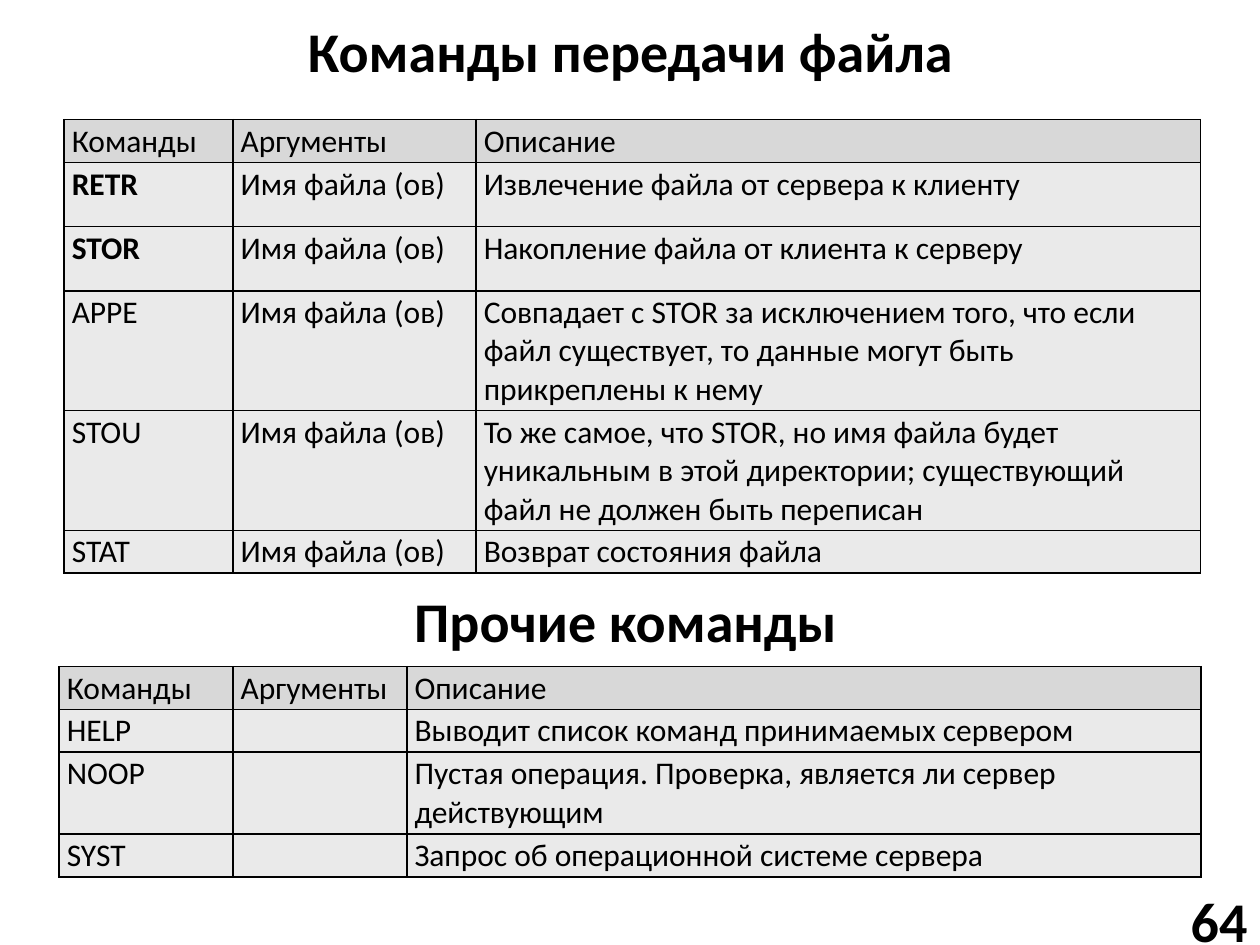
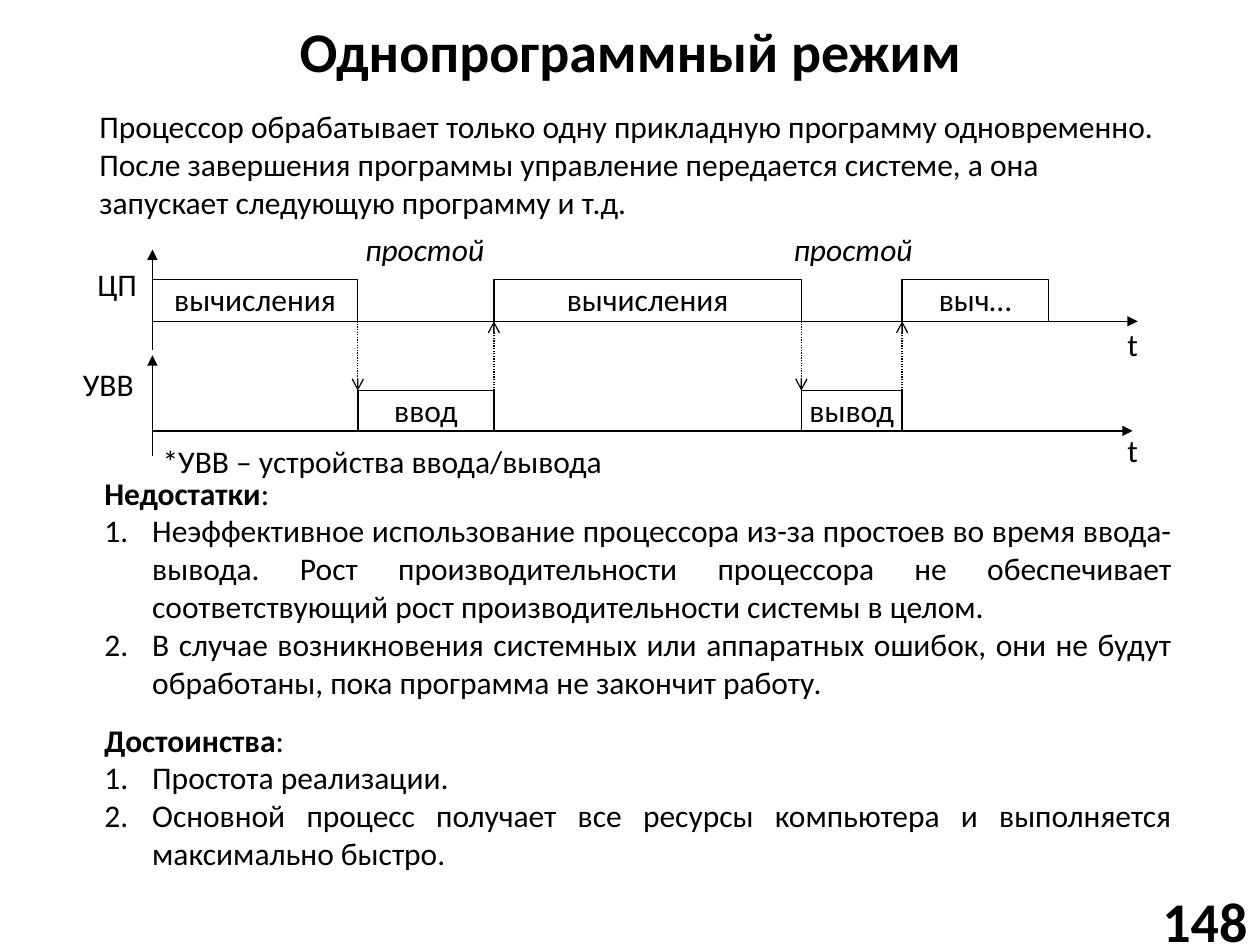
from lxml.etree import SubElement
from pptx import Presentation
from pptx.dml.color import RGBColor
from pptx.enum.dml import MSO_LINE
from pptx.enum.shapes import MSO_CONNECTOR, MSO_SHAPE
from pptx.enum.text import MSO_ANCHOR, PP_ALIGN
from pptx.oxml.ns import qn
from pptx.util import Inches, Pt

BLACK = RGBColor(0x00, 0x00, 0x00)
WHITE = RGBColor(0xFF, 0xFF, 0xFF)
HEADER_GREY = RGBColor(0xD8, 0xD8, 0xD8)
ROW_GREY = RGBColor(0xEA, 0xEA, 0xEA)
FONT = "Calibri"
BODY_SIZE, TITLE_SIZE = 18, 32
WIDTH, HEIGHT = 10, 7.5
TITLE_AREA = (0.28, 0.05, 9.45, 0.69)
SUBTITLE_AREA = (0.24, 4.58, 9.45, 0.69)
NUMBER_AREA = (8.86, 7.1, 1.14, 0.4)

HEADER = ("Команды", "Аргументы", "Описание")
FILE_NAMES = "Имя файла (ов)"
TRANSFER_COMMANDS = [
    HEADER,
    ("RETR", FILE_NAMES, "Извлечение файла от сервера к клиенту"),
    ("STOR", FILE_NAMES, "Накопление файла от клиента к серверу"),
    ("APPE", FILE_NAMES, "Совпадает с STOR за исключением того, что если файл "
     "существует, то данные могут быть прикреплены к нему"),
    ("STOU", FILE_NAMES, "То же самое, что STOR, но имя файла будет уникальным в этой "
     "директории; существующий файл не должен быть переписан"),
    ("STAT", FILE_NAMES, "Возврат состояния файла"),
]
OTHER_COMMANDS = [
    HEADER,
    ("HELP", "", "Выводит список команд принимаемых сервером"),
    ("NOOP", "", "Пустая операция. Проверка, является ли сервер действующим"),
    ("SYST", "", "Запрос об операционной системе сервера"),
]
BOLD_COMMANDS = ("RETR", "STOR")

INTRO = ("Процессор обрабатывает только одну прикладную программу одновременно. "
         "После завершения программы управление передается системе, а она "
         "запускает следующую программу и т.д.")
LISTS = [
    ("Недостатки", 3.71, 1.92, [
        "Неэффективное использование процессора из-за простоев во время ввода-вывода. "
        "Рост производительности процессора не обеспечивает соответствующий рост "
        "производительности системы в целом.",
        "В случае возникновения системных или аппаратных ошибок, они не будут "
        "обработаны, пока программа не закончит работу.",
    ]),
    ("Достоинства", 5.67, 1.31, [
        "Простота реализации.",
        "Основной процесс получает все ресурсы компьютера и выполняется максимально быстро.",
    ]),
]

INSTANTS = [1.21, 2.84, 3.92, 6.36, 7.16, 8.32]
CPU_TOP, CPU_AXIS = 2.22, 2.55
IO_TOP, IO_AXIS = 3.1, 3.42
BURSTS = [
    ("вычисления", 0, CPU_TOP, CPU_AXIS),
    ("ввод", 1, IO_TOP, IO_AXIS),
    ("вычисления", 2, CPU_TOP, CPU_AXIS),
    ("вывод", 3, IO_TOP, IO_AXIS),
    ("выч…", 4, CPU_TOP, CPU_AXIS),
]
AXIS_LABELS = [
    ("ЦП", (0.73, 2.1, 0.4, 0.25)),
    ("УВВ", (0.61, 2.9, 0.5, 0.25)),
    ("t", (8.79, 2.58, 0.4, 0.25)),
    ("t", (8.79, IO_AXIS, 0.4, 0.25)),
]
FOOTNOTE = ("*УВВ – устройства ввода/вывода", (1.29, 3.51, 4.95, 0.24))


def inches(lengths):
    return [Inches(length) for length in lengths]


def style(para, size=BODY_SIZE, bold=False, italic=False, align=PP_ALIGN.LEFT):
    para.alignment = align
    for span in para.runs:
        font = span.font
        font.name, font.size = FONT, Pt(size)
        font.bold, font.italic = bold, italic
        font.color.rgb = BLACK


def add_text(page, text, area, anchor=MSO_ANCHOR.TOP, wrap=True, **look):
    frame = page.shapes.add_textbox(*inches(area)).text_frame
    frame.word_wrap = wrap
    frame.vertical_anchor = anchor
    frame.text = text
    style(frame.paragraphs[0], **look)
    return frame


def add_heading(page, text, area, align=PP_ALIGN.CENTER):
    add_text(page, text, area, MSO_ANCHOR.MIDDLE, size=TITLE_SIZE, bold=True, align=align)


def add_page(deck, title, number):
    page = deck.slides.add_slide(deck.slide_layouts[6])
    add_heading(page, title, TITLE_AREA)
    add_heading(page, str(number), NUMBER_AREA, PP_ALIGN.RIGHT)
    return page


def add_borders(cell):
    properties = cell._tc.get_or_add_tcPr()
    for index, side in enumerate(("lnL", "lnR", "lnT", "lnB")):
        border = properties.makeelement(qn(f"a:{side}"), {"w": str(Pt(1))})
        fill = SubElement(border, qn("a:solidFill"))
        SubElement(fill, qn("a:srgbClr"), val=str(BLACK))
        properties.insert(index, border)


def add_commands(page, commands, left, top, widths, heights):
    area = inches((left, top, sum(widths), sum(heights)))
    table = page.shapes.add_table(len(commands), len(widths), *area).table
    for column, width in zip(table.columns, widths):
        column.width = Inches(width)
    for row, height, texts in zip(table.rows, heights, commands):
        row.height = Inches(height)
        is_header = texts is HEADER
        for cell, text in zip(row.cells, texts):
            cell.text = text
            cell.margin_left = cell.margin_right = Inches(0.06)
            cell.margin_top = cell.margin_bottom = Inches(0.02)
            cell.vertical_anchor = MSO_ANCHOR.MIDDLE if is_header else MSO_ANCHOR.TOP
            cell.fill.solid()
            cell.fill.fore_color.rgb = HEADER_GREY if is_header else ROW_GREY
            style(cell.text_frame.paragraphs[0], bold=text in BOLD_COMMANDS)
            add_borders(cell)


def add_box(page, text, area, outlined=False, align=PP_ALIGN.CENTER):
    box = page.shapes.add_shape(MSO_SHAPE.RECTANGLE, *inches(area))
    box.shadow.inherit = False
    box.fill.solid()
    box.fill.fore_color.rgb = WHITE
    if outlined:
        box.line.color.rgb = BLACK
        box.line.width = Pt(0.75)
    else:
        box.line.fill.background()
    frame = box.text_frame
    frame.margin_left = frame.margin_right = frame.margin_top = frame.margin_bottom = 0
    frame.vertical_anchor = MSO_ANCHOR.TOP
    frame.text = text
    style(frame.paragraphs[0], align=align)


def add_arrow(page, start, end, head="triangle", dotted=False):
    arrow = page.shapes.add_connector(MSO_CONNECTOR.STRAIGHT, *inches(start + end))
    arrow.line.color.rgb = BLACK
    arrow.line.width = Pt(0.75)
    if dotted:
        arrow.line.dash_style = MSO_LINE.ROUND_DOT
    SubElement(arrow.line._get_or_add_ln(), qn("a:tailEnd"), type=head)
    SubElement(arrow._element.spPr, qn("a:effectLst"))


def add_timeline(page):
    for text, area in AXIS_LABELS:
        add_box(page, text, area)
    add_box(page, *FOOTNOTE, align=PP_ALIGN.LEFT)
    for text, step, top, axis in BURSTS:
        begin, finish = INSTANTS[step:step + 2]
        add_box(page, text, (begin, top, finish - begin, axis - top), outlined=True)
    origin = INSTANTS[0]
    for axis, bottom, right in ((CPU_AXIS, 2.78, 9.03), (IO_AXIS, 3.62, 8.99)):
        add_arrow(page, (origin, bottom), (origin, bottom - 0.8))
        add_arrow(page, (origin, axis), (right, axis))
    for step, instant in enumerate(INSTANTS[1:-1]):
        ends = [(instant, CPU_AXIS), (instant, IO_TOP)]
        if step % 2:
            ends.reverse()
        add_arrow(page, *ends, head="arrow", dotted=True)
    for left in (2.8, 6.2):
        add_text(page, "простой", (left, 1.78, 1.16, 0.4), wrap=False, italic=True)


def add_numbered_list(page, heading, top, height, items):
    frame = add_text(page, heading, (0.73, top, 8.67, height), bold=True,
                     align=PP_ALIGN.JUSTIFY)
    colon = frame.paragraphs[0].add_run()
    colon.text = ":"
    colon.font.name, colon.font.size = FONT, Pt(BODY_SIZE)
    colon.font.color.rgb = BLACK
    for item in items:
        para = frame.add_paragraph()
        para.text = item
        style(para, align=PP_ALIGN.JUSTIFY)
        properties = para._p.get_or_add_pPr()
        properties.set("marL", str(Inches(0.38)))
        properties.set("indent", str(-Inches(0.38)))
        SubElement(properties, qn("a:buFont"), typeface="+mj-lt")
        SubElement(properties, qn("a:buAutoNum"), type="arabicPeriod")


def main():
    """Build the two lecture slides and save them."""
    deck = Presentation()
    deck.slide_width, deck.slide_height = inches((WIDTH, HEIGHT))

    page = add_page(deck, "Команды передачи файла", 64)
    add_commands(page, TRANSFER_COMMANDS, 0.51, 0.95, (1.34, 1.93, 5.75),
                 (0.34, 0.51, 0.51, 0.95, 0.95, 0.34))
    add_heading(page, "Прочие команды", SUBTITLE_AREA)
    add_commands(page, OTHER_COMMANDS, 0.47, 5.29, (1.38, 1.38, 6.3),
                 (0.34, 0.34, 0.65, 0.34))

    page = add_page(deck, "Однопрограммный режим", 148)
    add_text(page, INTRO, (0.69, 0.8, 8.67, 1.01))
    add_timeline(page)
    for section in LISTS:
        add_numbered_list(page, *section)

    deck.save("out.pptx")


if __name__ == "__main__":
    main()
